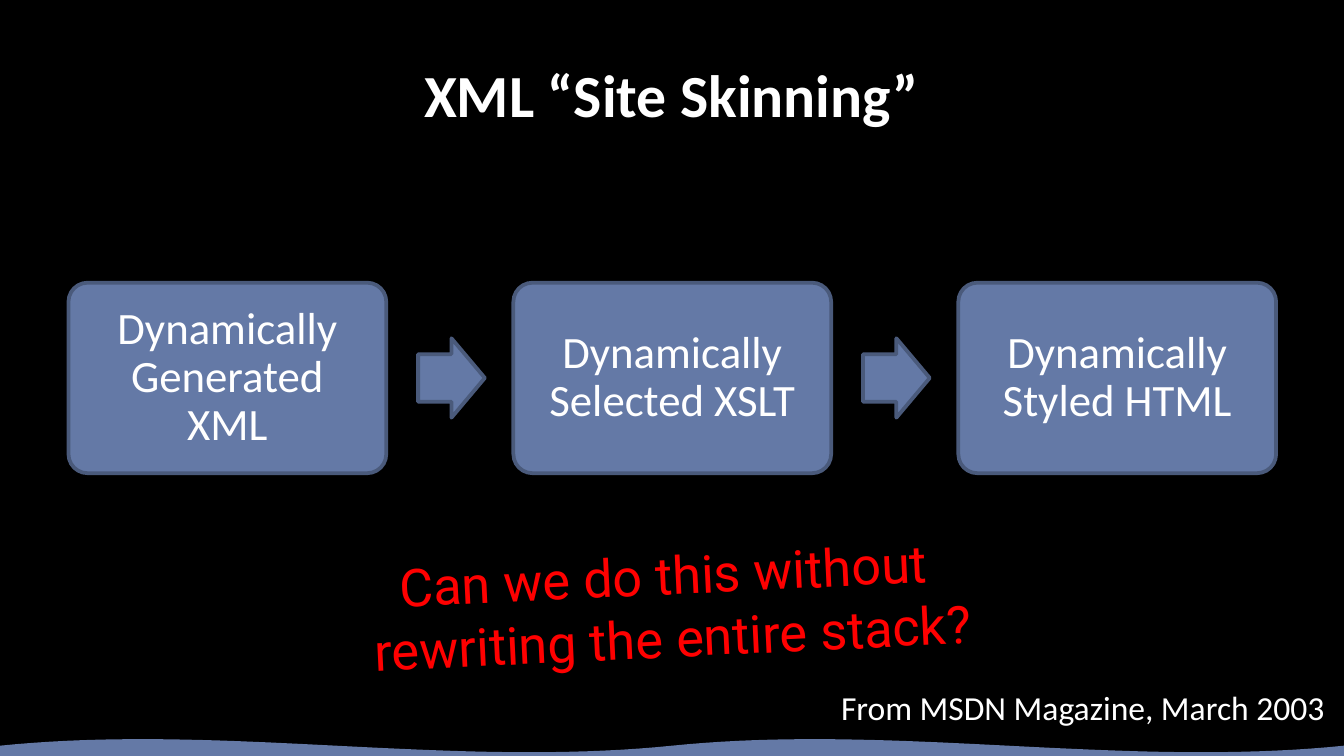
from collections import namedtuple

from pptx import Presentation
from pptx.dml.color import RGBColor
from pptx.enum.shapes import MSO_SHAPE
from pptx.enum.text import MSO_ANCHOR, PP_ALIGN
from pptx.util import Inches, Pt

BLACK = RGBColor(0x00, 0x00, 0x00)
WHITE = RGBColor(0xFF, 0xFF, 0xFF)
RED = RGBColor(0xFF, 0x00, 0x00)
BLUE = RGBColor(0x64, 0x79, 0xA6)
DARK_BLUE = RGBColor(0x4A, 0x5A, 0x7B)

SLIDE_WIDTH = Inches(10)
SLIDE_HEIGHT = SLIDE_WIDTH * 9 // 16
COLUMN = SLIDE_WIDTH / 100
ROW = SLIDE_HEIGHT / 100
STEPS = ["Dynamically Generated XML", "Dynamically Selected XSLT", "Dynamically Styled HTML"]

Box = namedtuple("Box", "left top width height")


def grid_box(left, top, width, height):
    return Box(int(left * COLUMN), int(top * ROW), int(width * COLUMN), int(height * ROW))


def write(shape, lines, size, color, font="Calibri", align=PP_ALIGN.CENTER, bold=False):
    frame = shape.text_frame
    frame.text = "\n".join(lines)
    for paragraph in frame.paragraphs:
        paragraph.alignment = align
        paragraph.font.size = Pt(size)
        paragraph.font.name = font
        paragraph.font.bold = bold
        paragraph.font.color.rgb = color
    return frame


def add_block(slide, kind, box, adjustments):
    shape = slide.shapes.add_shape(kind, *box)
    shape.shadow.inherit = False
    shape.fill.solid()
    shape.fill.fore_color.rgb = BLUE
    shape.line.color.rgb = DARK_BLUE
    shape.line.width = Pt(2)
    for index, value in enumerate(adjustments):
        shape.adjustments[index] = value
    return shape


def add_wave(slide, box, samples=80):
    middle = box.top + box.height * 0.55
    points = []
    for index in range(samples + 1):
        position = index / samples
        phase = position * 2 % 1
        offset = 3 * phase * (1 - phase) * (2 * phase - 1) * box.height
        points.append((int(box.left + position * box.width), int(middle + offset)))
    builder = slide.shapes.build_freeform(*points[0])
    bottom = box.top + box.height
    corners = [(box.left + box.width, bottom), (box.left, bottom)]
    builder.add_line_segments(points[1:] + corners, close=True)
    wave = builder.convert_to_shape()
    wave.shadow.inherit = False
    wave.fill.solid()
    wave.fill.fore_color.rgb = BLUE
    wave.line.fill.background()


def add_flow(slide, box):
    gap_share = 0.4
    step_width = box.width / (len(STEPS) + gap_share * (len(STEPS) - 1))
    pitch = step_width * (1 + gap_share)
    arrow_width = step_width * 0.21
    arrow_height = step_width * 0.25
    for index, label in enumerate(STEPS):
        left = box.left + index * pitch
        step_box = Box(int(left), box.top, int(step_width), box.height)
        step = add_block(slide, MSO_SHAPE.ROUNDED_RECTANGLE, step_box, [0.1])
        frame = write(step, [label], 24, WHITE)
        frame.word_wrap = True
        frame.vertical_anchor = MSO_ANCHOR.MIDDLE
        frame.margin_left = frame.margin_right = Inches(0.15)
        frame.margin_top = frame.margin_bottom = Inches(0.15)
        frame.paragraphs[0].line_spacing = 0.9
        if index < len(STEPS) - 1:
            arrow_box = Box(int(left + step_width * 1.1),
                            int(box.top + (box.height - arrow_height) / 2),
                            int(arrow_width), int(arrow_height))
            add_block(slide, MSO_SHAPE.RIGHT_ARROW, arrow_box, [0.6, 0.5])


def add_title(slide, box):
    frame = write(slide.shapes.add_textbox(*box), ["XML “Site Skinning”"], 32, WHITE, bold=True)
    frame.word_wrap = True
    frame.vertical_anchor = MSO_ANCHOR.MIDDLE


def add_source_line(slide, box):
    text_box = slide.shapes.add_textbox(*box)
    frame = write(text_box, ["From MSDN Magazine, March 2003"], 18, WHITE, align=PP_ALIGN.LEFT)
    frame.word_wrap = False


def add_question(slide, box):
    text_box = slide.shapes.add_textbox(*box)
    lines = ["Can we do this without ", "rewriting the entire stack?"]
    write(text_box, lines, 28, RED, font="Roboto").word_wrap = False
    text_box.rotation = 357.2


def main():
    presentation = Presentation()
    presentation.slide_width = SLIDE_WIDTH
    presentation.slide_height = SLIDE_HEIGHT
    slide = presentation.slides.add_slide(presentation.slide_layouts[6])
    slide.background.fill.solid()
    slide.background.fill.fore_color.rgb = BLACK
    add_wave(slide, grid_box(0, 97, 100, 3))
    add_flow(slide, grid_box(5.1, 37.4, 89.85, 25.2))
    add_source_line(slide, grid_box(61.6, 90, 38.4, 7.1))
    add_title(slide, grid_box(5, 4.1, 90, 16.7))
    add_question(slide, grid_box(22.3, 70.8, 55.3, 18.5))
    presentation.save("out.pptx")


if __name__ == "__main__":
    main()
